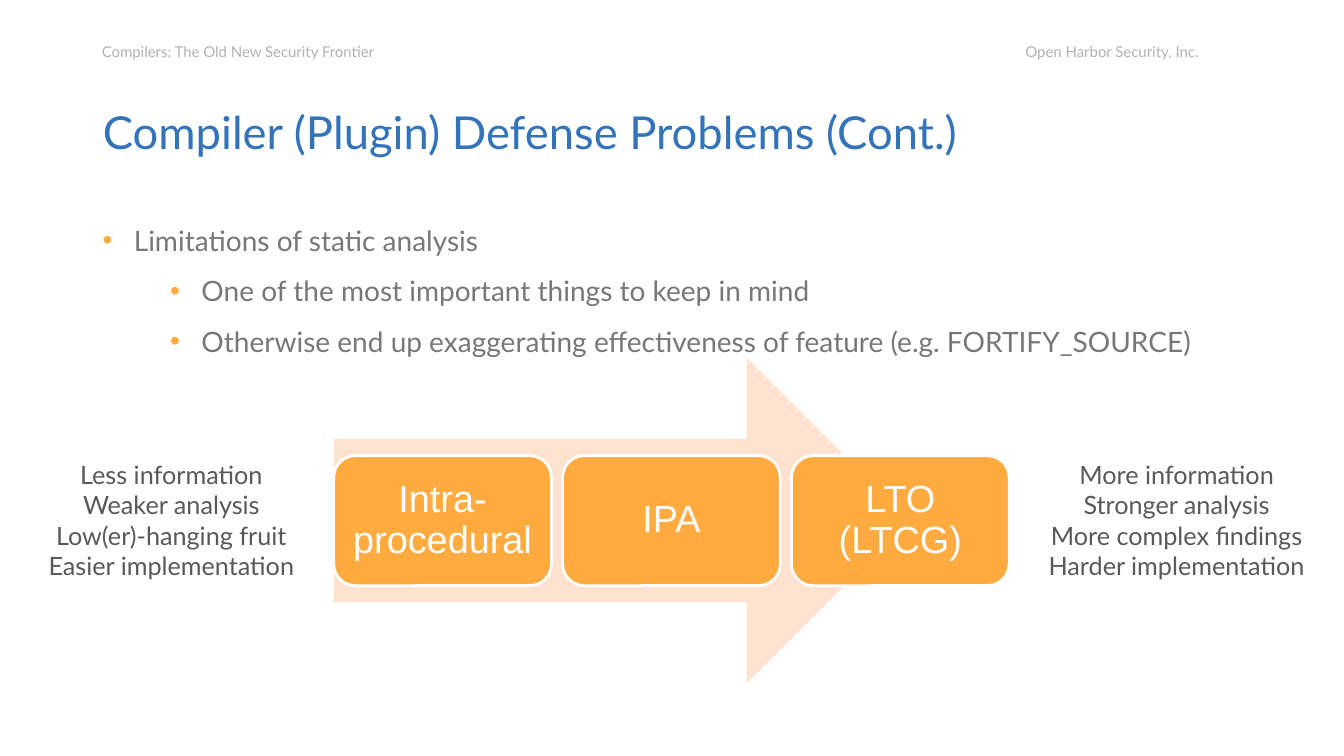
from lxml import etree
from pptx import Presentation
from pptx.dml.color import RGBColor
from pptx.enum.shapes import MSO_SHAPE
from pptx.enum.text import MSO_ANCHOR, MSO_AUTO_SIZE, PP_ALIGN
from pptx.oxml.ns import qn
from pptx.util import Inches, Pt

LEFT, MID, RIGHT = PP_ALIGN.LEFT, PP_ALIGN.CENTER, PP_ALIGN.RIGHT
TOP, CENTER = MSO_ANCHOR.TOP, MSO_ANCHOR.MIDDLE
ARROW, ROUND = MSO_SHAPE.RIGHT_ARROW, MSO_SHAPE.ROUNDED_RECTANGLE
ORANGE, PEACH, WHITE = "FFAB40", "FFE2CF", "FFFFFF"

TITLE = "Compiler (Plugin) Defense Problems (Cont.)"
HEADS = [
    ("Compilers: The Old New Security Frontier", 0.88, 3, LEFT),
    ("Open Harbor Security, Inc.", 9.73, 2.29, RIGHT),
]
POINTS = [
    (0, "Limitations of static analysis"),
    (1, "One of the most important things to keep in mind"),
    (1, "Otherwise end up exaggerating effectiveness of feature (e.g. FORTIFY_SOURCE)"),
]
STAGES = ["Intra-procedural", "IPA", "LTO (LTCG)"]
SIDES = [
    (0.35, 2.7, ["Less information", "Weaker analysis",
                 "Low(er)-hanging fruit", "Easier implementation"]),
    (10.28, 2.78, ["More information", "Stronger analysis",
                   "More complex findings", "Harder implementation"]),
]


def color(code):
    return RGBColor.from_string(code)


def style(frame, size, code, align=LEFT, anchor=TOP, font="Lato", space=None):
    frame.vertical_anchor = anchor
    for para in frame.paragraphs:
        para.alignment = align
        if space:
            para.line_spacing = space
        for run in para.runs:
            run.font.size = Pt(size)
            run.font.name = font
            run.font.color.rgb = color(code)


def inset(frame, gap):
    frame.margin_left = frame.margin_right = Inches(gap)
    frame.margin_top = frame.margin_bottom = Inches(gap)


def add_text(slide, x, y, w, h, text, wrap=True):
    box = slide.shapes.add_textbox(Inches(x), Inches(y), Inches(w), Inches(h))
    frame = box.text_frame
    frame.word_wrap = wrap
    frame.text = text
    return frame


def add_form(slide, kind, x, y, w, h, fill):
    form = slide.shapes.add_shape(kind, Inches(x), Inches(y), Inches(w), Inches(h))
    form.shadow.inherit = False
    form.fill.solid()
    form.fill.fore_color.rgb = color(fill)
    form.line.fill.background()
    return form


def add_bullet(para, level):
    para.level = level
    props = para._p.get_or_add_pPr()
    props.set("marL", str(Inches(0.31 + 0.67 * level)))
    props.set("indent", str(Inches(-0.31)))
    tint = etree.SubElement(props, qn("a:buClr"))
    etree.SubElement(tint, qn("a:srgbClr"), val=ORANGE)
    etree.SubElement(props, qn("a:buFont"), typeface="Arial")
    etree.SubElement(props, qn("a:buChar"), char="•")


def main():
    deck = Presentation()
    deck.slide_width, deck.slide_height = Inches(13.33), Inches(7.5)
    slide = deck.slides.add_slide(deck.slide_layouts[5])

    for text, x, w, align in HEADS:
        frame = add_text(slide, x, 0.26, w, 0.48, text)
        inset(frame, 0.13)
        style(frame, 10.7, "B2B2B2", align, CENTER, space=1.15)

    title = slide.shapes.title
    title.left, title.top = Inches(0.92), Inches(1.06)
    title.width, title.height = Inches(11.5), Inches(0.48)
    title.text_frame.text = TITLE
    title.text_frame.auto_size = MSO_AUTO_SIZE.NONE
    style(title.text_frame, 32.4, "3373BA", LEFT, CENTER)

    body = add_text(slide, 0.92, 2, 11.5, 5.35, "\n".join(t for _, t in POINTS))
    for para, (level, _) in zip(body.paragraphs, POINTS):
        add_bullet(para, level)
    style(body, 20, "777777", space=1.5)

    add_form(slide, ARROW, 3.31, 3.55, 5.71, 3.23, PEACH)
    for i, text in enumerate(STAGES):
        stage = add_form(slide, ROUND, 3.31 + 2.27 * i, 4.52, 2.16, 1.29, ORANGE)
        stage.line.color.rgb = color(WHITE)
        stage.line.width = Pt(2)
        frame = stage.text_frame
        frame.word_wrap = True
        frame.text = text
        inset(frame, 0.1)
        style(frame, 27, WHITE, MID, CENTER, "Arial", 0.9)

    for x, w, lines in SIDES:
        frame = add_text(slide, x, 4.51, w, 1.31, "\n".join(lines), False)
        frame.auto_size = MSO_AUTO_SIZE.SHAPE_TO_FIT_TEXT
        style(frame, 18, "595959", MID)

    deck.save("out.pptx")


if __name__ == "__main__":
    main()
